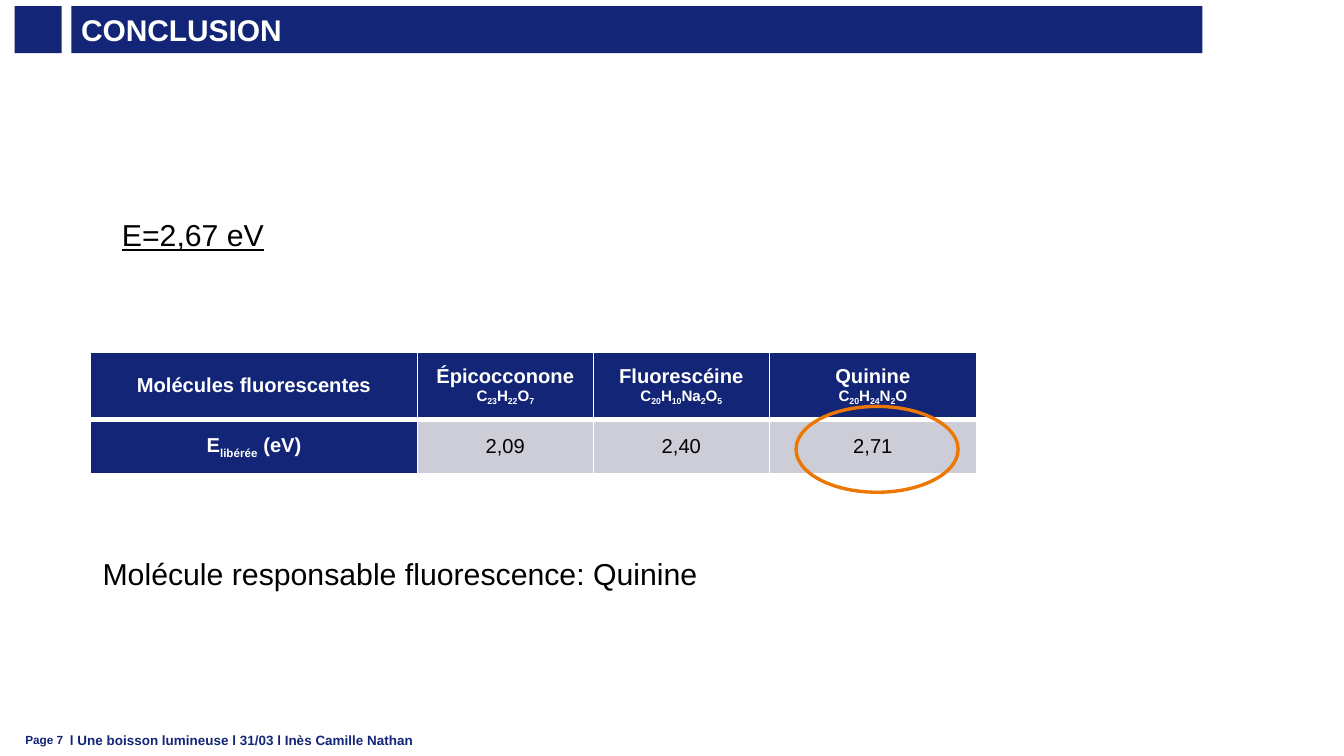
from dataclasses import dataclass
from lxml.etree import SubElement as Sub
from pptx import Presentation
from pptx.dml.color import RGBColor
from pptx.enum.shapes import MSO_SHAPE as Geo
from pptx.enum.text import MSO_ANCHOR as Anchor, MSO_AUTO_SIZE as Fit, PP_ALIGN as Align
from pptx.oxml.ns import qn
from pptx.util import Inches, Pt

NAVY = RGBColor(0x13, 0x25, 0x77)
WHITE = RGBColor(0xFF, 0xFF, 0xFF)
BLACK = RGBColor(0, 0, 0)
GREY = RGBColor(0xCC, 0xCD, 0xD6)
AMBER = RGBColor(0xED, 0x77, 0x03)
FONT = "Arial"

# The grid has 100 columns and 100 rows
WIDE, HIGH = Inches(11.11), Inches(6.25)


def col(n: float) -> int:
    return round(WIDE * n / 100)


def row(n: float) -> int:
    return round(HIGH * n / 100)


@dataclass
class Box:
    x: float
    y: float
    w: float
    h: float

    def emu(self) -> tuple:
        return col(self.x), row(self.y), col(self.w), row(self.h)


@dataclass
class Note:
    text: str
    box: Box
    size: float
    color: RGBColor = BLACK
    bold: bool = False
    line: bool = False


@dataclass
class Dye:
    name: str
    sum: str
    value: str
    width: float


NOTES = [
    Note("Page 7", Box(1, 96.16, 5.76, 3.52), 7, NAVY, True),
    Note("l Une boisson lumineuse l 31/03 l Inès Camille Nathan",
         Box(4.32, 96, 60.22, 3.68), 8, NAVY, True),
    Note("E=2,67 eV", Box(8.19, 27.84, 50.05, 6.4), 18, line=True),
    Note("Molécule responsable fluorescence: Quinine",
         Box(6.75, 72.64, 47.52, 6.4), 18),
]

# Subscripts stand between tildes
DYES = [
    Dye("Épicocconone", "C~23~H~22~O~7~", "2,09", 13.1),
    Dye("Fluorescéine", "C~20~H~10~Na~2~O~5~", "2,40", 13.1),
    Dye("Quinine", "C~20~H~24~N~2~O", "2,71", 15.4),
]
HEAD = 24.3
ROWS = [8.96, 7.2]


def write(para, text: str, size: float, color=BLACK, bold=False,
          line=False, align=Align.LEFT) -> None:
    para.alignment = align
    for i, part in enumerate(text.split("~")):
        if not part:
            continue
        run = para.add_run()
        run.text = part
        font = run.font
        font.name, font.size, font.bold = FONT, Pt(size), bold
        font.underline = line
        font.color.rgb = color
        if i % 2:
            run._r.get_or_add_rPr().set("baseline", "-25000")


def paint(shape, color: RGBColor) -> None:
    shape.fill.solid()
    shape.fill.fore_color.rgb = color


def label(slide, note: Note) -> None:
    frame = slide.shapes.add_textbox(*note.box.emu()).text_frame
    frame.word_wrap = True
    write(frame.paragraphs[0], note.text, note.size, note.color, note.bold, note.line)


def shape(slide, geo: Geo, box: Box):
    item = slide.shapes.add_shape(geo, *box.emu())
    item.shadow.inherit = False
    return item


def edge(cell, top: float, base: float) -> None:
    props = cell._tc.get_or_add_tcPr()
    for side, width in zip("LRTB", (1, 1, top, base)):
        line = Sub(props, qn(f"a:ln{side}"), w=str(Pt(width)))
        Sub(Sub(line, qn("a:solidFill")), qn("a:srgbClr"), val=str(WHITE))


def fill_cell(cell, lines: list, color: RGBColor, ink: RGBColor,
              bold: bool, top: float, base: float) -> None:
    edge(cell, top, base)
    paint(cell, color)
    cell.vertical_anchor = Anchor.MIDDLE
    cell.margin_left = cell.margin_right = Inches(0.07)
    cell.margin_top = cell.margin_bottom = 0
    frame = cell.text_frame
    for i, (text, size) in enumerate(lines):
        para = frame.add_paragraph() if i else frame.paragraphs[0]
        write(para, text, size, ink, bold, align=Align.CENTER)


def add_title(slide) -> None:
    title = slide.shapes.title
    title.left, title.top, title.width, title.height = Box(5.31, 0.8, 84.16, 6.24).emu()
    paint(title, NAVY)
    frame = title.text_frame
    frame.auto_size = Fit.NONE
    frame.vertical_anchor = Anchor.MIDDLE
    frame.margin_left = frame.margin_right = Inches(0.08)
    frame.margin_top = frame.margin_bottom = 0
    write(frame.paragraphs[0], "CONCLUSION", 17.8, WHITE, True)


def add_grid(slide) -> None:
    sizes = [HEAD] + [dye.width for dye in DYES]
    box = Box(6.75, 46.56, sum(sizes), sum(ROWS))
    table = slide.shapes.add_table(len(ROWS), len(sizes), *box.emu()).table
    table.horz_banding = False
    for item, size in zip(table.columns, sizes):
        item.width = col(size)
    for item, size in zip(table.rows, ROWS):
        item.height = row(size)
    heads = [[("Molécules fluorescentes", 12)]]
    heads += [[(dye.name, 12), (dye.sum, 9)] for dye in DYES]
    cells = [[("E~libérée~ (eV)", 12)]] + [[(dye.value, 12)] for dye in DYES]
    for i, (head, body) in enumerate(zip(heads, cells)):
        fill_cell(table.cell(0, i), head, NAVY, WHITE, True, 1, 3)
        look = (GREY, BLACK, False) if i else (NAVY, WHITE, True)
        fill_cell(table.cell(1, i), body, *look, 3, 1)


def main() -> None:
    deck = Presentation()
    deck.slide_width, deck.slide_height = WIDE, HIGH
    slide = deck.slides.add_slide(deck.slide_layouts[5])

    # Header band
    add_title(slide)
    block = shape(slide, Geo.RECTANGLE, Box(1.08, 0.8, 3.51, 6.24))
    paint(block, NAVY)
    block.line.fill.background()

    # Energy table and the ring around the match
    add_grid(slide)
    ring = shape(slide, Geo.OVAL, Box(59.23, 53.76, 12.06, 11.36))
    ring.fill.background()
    ring.line.color.rgb = AMBER
    ring.line.width = Pt(2)

    # Statements and footer
    for note in NOTES:
        label(slide, note)

    deck.save("out.pptx")


if __name__ == "__main__":
    main()
